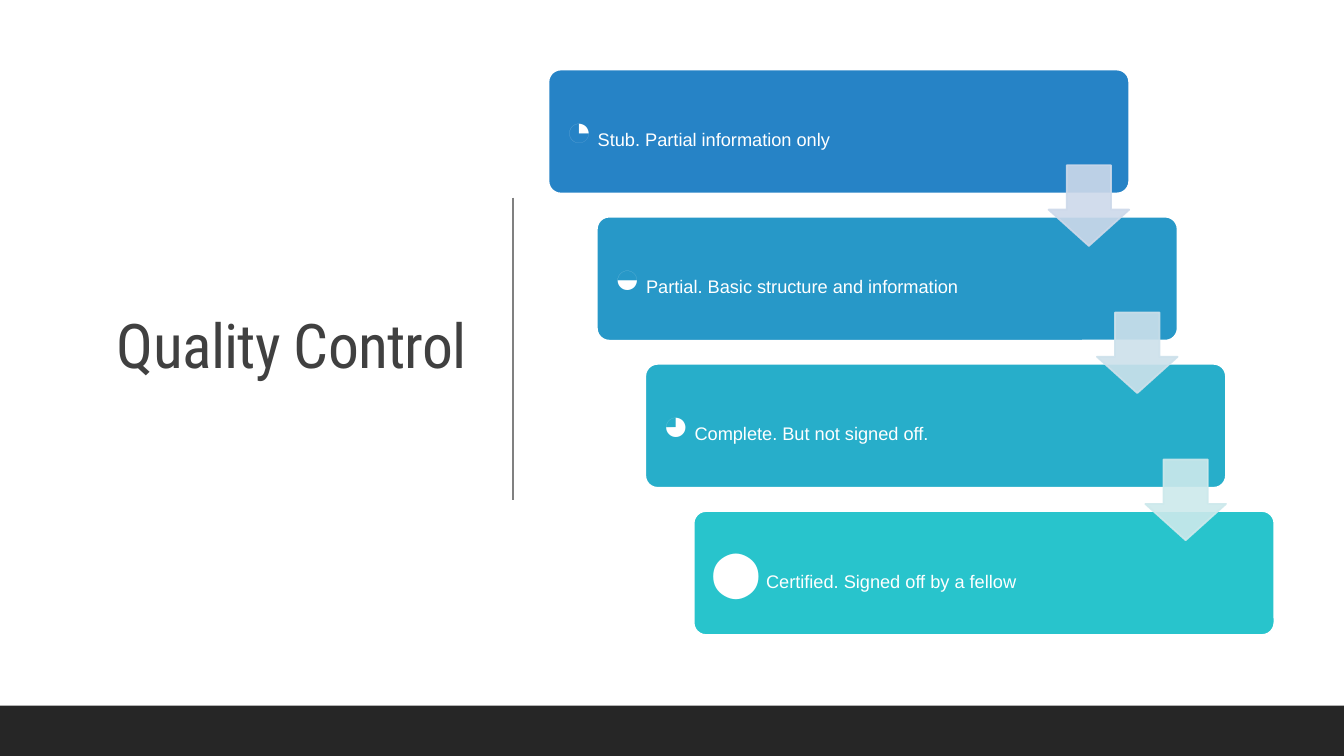
from pptx import Presentation
from pptx.dml.color import RGBColor
from pptx.enum.shapes import MSO_CONNECTOR, MSO_SHAPE
from pptx.enum.text import MSO_ANCHOR, PP_ALIGN
from pptx.oxml.ns import qn
from pptx.util import Inches, Pt
from lxml import etree

WHITE = RGBColor(0xFF, 0xFF, 0xFF)
TITLE_GRAY = RGBColor(0x40, 0x40, 0x40)
DIVIDER_GRAY = RGBColor(0x80, 0x80, 0x80)
FOOTER_BLACK = RGBColor(0x26, 0x26, 0x26)

# Symbol, description, box colour
STEPS = [
    ("◔", "Stub. Partial information only", RGBColor(0x26, 0x83, 0xC6)),
    ("◒", "Partial. Basic structure and information", RGBColor(0x27, 0x98, 0xC8)),
    ("◕", "Complete. But not signed off.", RGBColor(0x27, 0xAE, 0xCA)),
    ("⬤", "Certified. Signed off by a fellow", RGBColor(0x28, 0xC4, 0xCC)),
]
ARROW_COLORS = [
    RGBColor(0xCD, 0xD9, 0xEA),
    RGBColor(0xCD, 0xE1, 0xEB),
    RGBColor(0xCD, 0xE9, 0xEC),
]
STEP_WIDTH, STEP_HEIGHT = 5.76, 1.23
ARROW_SIZE = 0.8


def add_box(slide, kind, left, top, width, height, fill, line=None):
    shape = slide.shapes.add_shape(
        kind, Inches(left), Inches(top), Inches(width), Inches(height))
    shape.shadow.inherit = False
    shape.fill.solid()
    shape.fill.fore_color.rgb = fill
    if line is None:
        shape.line.fill.background()
    else:
        shape.line.color.rgb = line
        shape.line.width = Pt(1.25)
    return shape


def add_text(slide, left, top, width, height, inset):
    """Add a middle-anchored text box and return its first paragraph."""
    box = slide.shapes.add_textbox(
        Inches(left), Inches(top), Inches(width), Inches(height))
    frame = box.text_frame
    frame.word_wrap = True
    frame.vertical_anchor = MSO_ANCHOR.MIDDLE
    frame.margin_left = frame.margin_right = Inches(inset)
    frame.margin_top = frame.margin_bottom = Inches(min(inset, 0.13))
    paragraph = frame.paragraphs[0]
    paragraph.line_spacing = 0.9
    return paragraph


def add_run(paragraph, text, font_name, size, color, bold=False):
    run = paragraph.add_run()
    run.text = text
    run.font.name = font_name
    run.font.size = Pt(size)
    run.font.bold = bold
    run.font.color.rgb = color
    return run


def add_title(slide, left, top, width, height):
    paragraph = add_text(slide, left, top, width, height, 0.1)
    paragraph.alignment = PP_ALIGN.RIGHT
    run = add_run(paragraph, "Quality Control", "Roboto Condensed", 44, TITLE_GRAY)
    run.font._element.set("spc", "-50")


def add_divider(slide, left, top, height):
    line = slide.shapes.add_connector(
        MSO_CONNECTOR.STRAIGHT, Inches(left), Inches(top),
        Inches(left), Inches(top + height))
    line.line.color.rgb = DIVIDER_GRAY
    line.line.width = Pt(1)
    etree.SubElement(line._element.spPr, qn("a:effectLst"))


def add_step(slide, left, top, symbol, description, color):
    box = add_box(slide, MSO_SHAPE.ROUNDED_RECTANGLE, left, top,
                  STEP_WIDTH, STEP_HEIGHT, color, WHITE)
    box.adjustments[0] = 0.1
    paragraph = add_text(slide, left + 0.04, top + 0.04, 4.4, 1.16, 0.13)
    paragraph.space_after = Pt(5)
    add_run(paragraph, symbol, "Arial", 32, WHITE, bold=True)
    add_run(paragraph, " " + description, "Arial", 13, WHITE)


def add_arrow(slide, left, top, color):
    arrow = add_box(slide, MSO_SHAPE.DOWN_ARROW, left, top,
                    ARROW_SIZE, ARROW_SIZE, color, color)
    arrow.adjustments[0] = 0.55
    arrow.adjustments[1] = 0.45
    # Fill and line are both 90 % opaque
    for color_element in arrow._element.spPr.iter(qn("a:srgbClr")):
        etree.SubElement(color_element, qn("a:alpha"), val="90000")


def add_staircase(slide, left, top):
    step_right, step_down = 0.48, 1.46
    corners = [(left + i * step_right, top + i * step_down)
               for i in range(len(STEPS))]
    for (x, y), step in zip(corners, STEPS):
        add_step(slide, x, y, *step)
    # Arrows lie over the boxes, flush with each right edge
    for (x, y), color in zip(corners, ARROW_COLORS):
        add_arrow(slide, x + STEP_WIDTH - ARROW_SIZE, y + 0.95, color)


def main():
    presentation = Presentation()
    presentation.slide_width = Inches(13.33)
    presentation.slide_height = Inches(7.5)
    slide = presentation.slides.add_slide(presentation.slide_layouts[6])
    slide.background.fill.solid()
    slide.background.fill.fore_color.rgb = WHITE

    add_title(slide, 0.7, 0.69, 4.03, 5.53)
    add_divider(slide, 5.09, 1.96, 3)
    add_box(slide, MSO_SHAPE.RECTANGLE, 0, 7, 13.33, 0.5, FOOTER_BLACK)
    add_staircase(slide, 5.44, 0.69)
    presentation.save("out.pptx")


if __name__ == "__main__":
    main()
